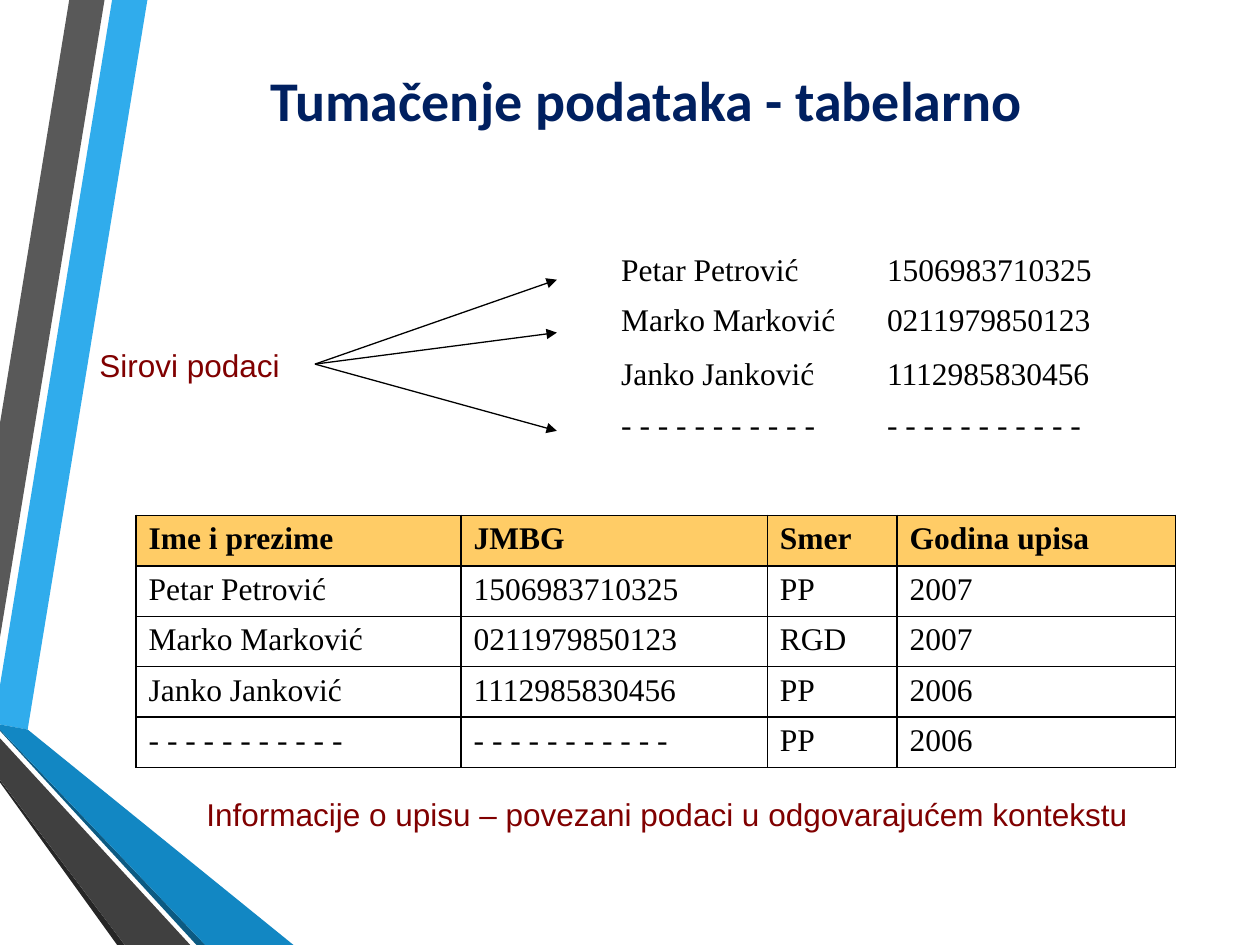
from dataclasses import dataclass

from lxml.etree import SubElement
from pptx import Presentation
from pptx.dml.color import RGBColor
from pptx.enum.shapes import MSO_CONNECTOR
from pptx.enum.text import MSO_ANCHOR, MSO_AUTO_SIZE, PP_ALIGN
from pptx.oxml.ns import qn
from pptx.util import Inches, Pt


@dataclass(frozen=True)
class Theme:
    title_font: str = "Calibri"
    label_font: str = "Arial"
    table_font: str = "Times New Roman"
    title_size: int = 32
    body_size: int = 18
    title: str = "002060"
    label: str = "800000"
    ink: str = "000000"
    header: str = "FFCC66"
    arrow_width: float = 0.75
    border_width: float = 1


THEME = Theme()
COLUMNS, ROWS = 100, 75  # square grid cells, a tenth of an inch each
NO_STYLE = "{2D5ABB26-0587-4C30-8999-92F81FD0307C}"
DASHES = " ".join("-" * 11)

PEOPLE = [
    ("Petar Petrović", "1506983710325"),
    ("Marko Marković", "0211979850123"),
    ("Janko Janković", "1112985830456"),
    (DASHES, DASHES),
]
ENROLMENTS = [("PP", "2007"), ("RGD", "2007"), ("PP", "2006"), ("PP", "2006")]
HEADINGS = ("Ime i prezime", "JMBG", "Smer", "Godina upisa")

# Fill colour and outline of each ribbon, back to front, in grid cells
RIBBONS = [
    ("30ACEC", [(0, 54.4), (0, 57.5), (2.2, 57.9), (11.7, 0), (8.9, 0)]),
    ("595959", [(8.3, 0), (5.5, 0), (0, 33.6), (0, 50.6)]),
    ("262626", [(0, 61.9), (0, 62.1), (9.3, ROWS), (9.9, ROWS)]),
    ("0C5A82", [(0, 57.9), (0, 58), (15.6, ROWS), (16.3, ROWS)]),
    ("1287C3", [(0, 57.9), (16.3, ROWS), (23.3, ROWS), (2.2, 57.9), (0, 57.5)]),
    ("404040", [(0, 61.9), (9.9, ROWS), (15.1, ROWS), (0, 58.6)]),
]


def grid(*cells):
    """Turn grid cells into slide lengths."""
    return [Inches(cell / 10) for cell in cells]


def paint(fill, color):
    fill.solid()
    fill.fore_color.rgb = RGBColor.from_string(color)


def write(frame, text, *, font, size=THEME.body_size, color=THEME.ink,
          bold=False, align=PP_ALIGN.LEFT):
    para = frame.paragraphs[0]
    para.alignment = align
    span = para.add_run()
    span.text = text
    span.font.name = font
    span.font.size = Pt(size)
    span.font.bold = bold
    span.font.color.rgb = RGBColor.from_string(color)
    return para


def add_ribbon(slide, color, outline):
    start, *others = [grid(*point) for point in outline]
    builder = slide.shapes.build_freeform(*start)
    builder.add_line_segments(others, close=True)
    ribbon = builder.convert_to_shape()
    ribbon.shadow.inherit = False
    paint(ribbon.fill, color)
    ribbon.line.fill.background()


def add_title(slide, text):
    box = slide.shapes.add_textbox(*grid(6.7, 2.5, 89.2, 10.8))
    box.text_frame.word_wrap = True
    box.text_frame.vertical_anchor = MSO_ANCHOR.MIDDLE
    write(box.text_frame, text, font=THEME.title_font, size=THEME.title_size,
          color=THEME.title, bold=True, align=PP_ALIGN.CENTER)


def add_label(slide, text, left, top, width):
    box = slide.shapes.add_textbox(*grid(left, top, width, 4))
    box.text_frame.word_wrap = False
    box.text_frame.auto_size = MSO_AUTO_SIZE.SHAPE_TO_FIT_TEXT
    write(box.text_frame, text, font=THEME.label_font, color=THEME.label)


def add_arrow(slide, start, end):
    arrow = slide.shapes.add_connector(
        MSO_CONNECTOR.STRAIGHT, *grid(*start, *end))
    arrow.line.width = Pt(THEME.arrow_width)
    arrow.line.color.rgb = RGBColor.from_string(THEME.ink)
    SubElement(arrow.line._get_or_add_ln(), qn("a:tailEnd"), type="triangle")
    SubElement(arrow._element.spPr, qn("a:effectLst"))


def add_borders(cell):
    properties = cell._tc.get_or_add_tcPr()
    for side in ("a:lnL", "a:lnR", "a:lnT", "a:lnB"):
        line = SubElement(properties, qn(side), w=str(Pt(THEME.border_width)))
        fill = SubElement(line, qn("a:solidFill"))
        SubElement(fill, qn("a:srgbClr"), val=THEME.ink)


def fill_cell(cell, text, *, header, bordered):
    para = write(cell.text_frame, text, font=THEME.table_font, bold=header)
    hang = Inches(0.38)
    properties = para._p.get_or_add_pPr()
    properties.set("marL", str(hang))
    properties.set("indent", str(-hang))
    if bordered:
        add_borders(cell)
    if header:
        paint(cell.fill, THEME.header)
    else:
        cell.fill.background()


def add_grid_table(slide, records, left, top, widths, heights,
                   *, header=False, bordered=False):
    frame = slide.shapes.add_table(
        len(heights), len(widths),
        *grid(left, top, sum(widths), sum(heights)))
    table = frame.table
    table.first_row = header
    table.horz_banding = False
    table._tbl.tblPr.find(qn("a:tableStyleId")).text = NO_STYLE
    for column, width in zip(table.columns, grid(*widths)):
        column.width = width
    for row, height in zip(table.rows, grid(*heights)):
        row.height = height
    for r, record in enumerate(records):
        for c, text in enumerate(record):
            fill_cell(table.cell(r, c), text,
                      header=header and r == 0, bordered=bordered)


def main():
    deck = Presentation()
    deck.slide_width, deck.slide_height = grid(COLUMNS, ROWS)
    slide = deck.slides.add_slide(deck.slide_layouts[6])

    for color, outline in RIBBONS:
        add_ribbon(slide, color, outline)
    add_title(slide, "Tumačenje podataka - tabelarno")

    add_grid_table(slide, PEOPLE, 48.3, 19.6, [21.1, 19.3], [4, 4.3, 4, 4])
    students = [person + entry for person, entry in zip(PEOPLE, ENROLMENTS)]
    add_grid_table(slide, [HEADINGS, *students], 10.8, 40.9,
                   [25.8, 24.3, 10.3, 22.1], [4] * 5,
                   header=True, bordered=True)

    add_label(slide, "Sirovi podaci", 6.9, 27, 16.5)
    for end_row in (26.4, 22.2, 34.2):
        add_arrow(slide, (25, 28.9), (44.2, end_row))
    add_label(slide,
              "Informacije o upisu – povezani podaci u odgovarajućem kontekstu",
              15.4, 62.6, 75.8)

    deck.save("out.pptx")


if __name__ == "__main__":
    main()
